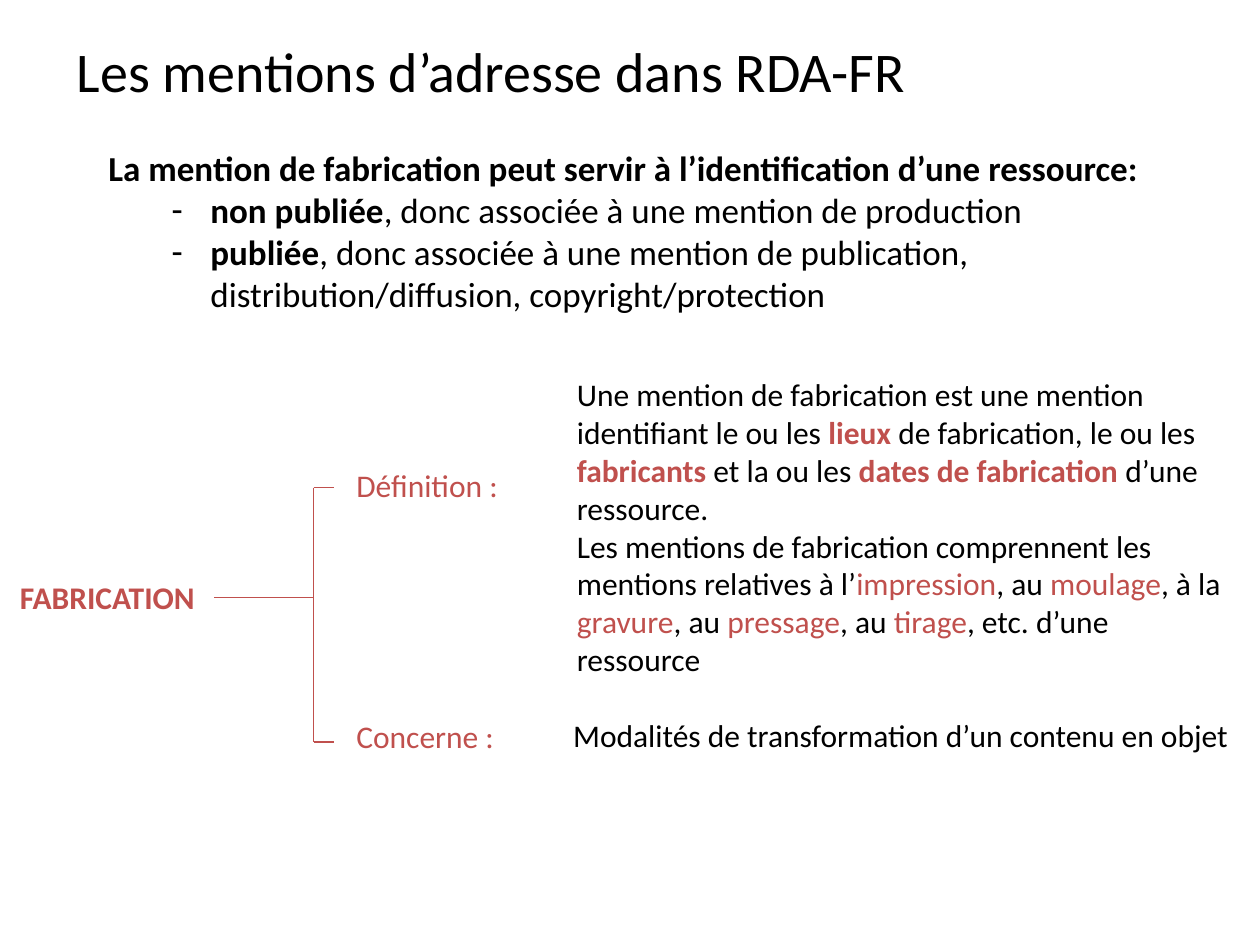
from pptx import Presentation
from pptx import util as u
from pptx.dml.color import RGBColor
from pptx.enum import shapes, text
from pptx.oxml.ns import qn
from lxml import etree

BLACK = RGBColor(0x00, 0x00, 0x00)
RED = RGBColor(0xC0, 0x50, 0x4D)

PLAIN = {"bold": False, "color": BLACK}
BOLD = {"bold": True, "color": BLACK}
ACCENT = {"bold": False, "color": RED}
ACCENT_BOLD = {"bold": True, "color": RED}

TITLE = [[("Les mentions d’adresse dans RDA-FR", PLAIN)]]
USES = [
    [("La mention de fabrication peut servir à l’identification d’une ressource:", BOLD)],
    [("non publiée", BOLD), (", donc associée à une mention de production", PLAIN)],
    [("publiée", BOLD),
     (", donc associée à une mention de publication, "
      "distribution/diffusion, copyright/protection", PLAIN)],
]
DEFINITION = [
    [("Une mention de fabrication est une mention identifiant le ou les ", PLAIN),
     ("lieux", ACCENT_BOLD), (" de fabrication, le ou les ", PLAIN),
     ("fabricants", ACCENT_BOLD), (" et la ou les ", PLAIN),
     ("dates de fabrication ", ACCENT_BOLD), ("d’une ressource.", PLAIN)],
    [("Les mentions de fabrication comprennent les mentions relatives à l’", PLAIN),
     ("impression", ACCENT), (", au ", PLAIN), ("moulage", ACCENT), (", à la ", PLAIN),
     ("gravure", ACCENT), (", au ", PLAIN), ("pressage", ACCENT), (", au ", PLAIN),
     ("tirage", ACCENT), (", etc. d’une ressource", PLAIN)],
]


def place(shape, left, top, width, height):
    box = {"left": left, "top": top, "width": width, "height": height}
    for name, value in box.items():
        setattr(shape, name, u.Inches(value))


def write(shape, paragraphs, size):
    """Fill a shape with paragraphs made of (text, style) runs."""
    frame = shape.text_frame
    settings = {"word_wrap": True, "auto_size": text.MSO_AUTO_SIZE.NONE,
                "vertical_anchor": text.MSO_ANCHOR.TOP}
    for name, value in settings.items():
        setattr(frame, name, value)
    for index, runs in enumerate(paragraphs):
        paragraph = frame.add_paragraph() if index else frame.paragraphs[0]
        paragraph.alignment = text.PP_ALIGN.LEFT
        paragraph.space_before = u.Pt(0)
        for words, style in runs:
            run = paragraph.add_run()
            run.text = words
            font = {"name": "Calibri", "size": u.Pt(size), "bold": style["bold"]}
            for name, value in font.items():
                setattr(run.font, name, value)
            run.font.color.rgb = style["color"]


def set_bullet(paragraph, character=None, margin=0, indent=0):
    properties = paragraph._p.get_or_add_pPr()
    properties.set("marL", str(u.Inches(margin)))
    properties.set("indent", str(u.Inches(indent)))
    if character:
        etree.SubElement(properties, qn("a:buChar")).set("char", character)
    else:
        etree.SubElement(properties, qn("a:buNone"))


def add_text(slide, box, paragraphs, size=18):
    shape = slide.shapes.add_textbox(*map(u.Inches, box))
    write(shape, paragraphs, size)


def add_line(slide, *ends):
    line = slide.shapes.add_connector(shapes.MSO_CONNECTOR.STRAIGHT, *map(u.Inches, ends))
    line.line.color.rgb = RED
    line.line.width = u.Pt(0.75)
    etree.SubElement(line._element.spPr, qn("a:effectLst"))


def add_bracket(slide, left, spine, middle, top, bottom, arm=0.16):
    add_line(slide, left, middle, spine, middle)
    add_line(slide, spine, top, spine, bottom)
    for height in (top, bottom):
        add_line(slide, spine, height, spine + arm, height)


def main():
    presentation = Presentation()
    presentation.slide_width = u.Inches(10)
    presentation.slide_height = u.Inches(7.5)
    slide = presentation.slides.add_slide(presentation.slide_layouts[1])

    # Title
    title = slide.shapes.title
    place(title, 0.51, 0.24, 9, 0.7)
    write(title, TITLE, 32)

    # Uses of the statement, with dashes below the lead sentence
    uses = slide.placeholders[1]
    place(uses, 0.76, 1.11, 8.5, 1.45)
    write(uses, USES, 20)
    lead, *items = uses.text_frame.paragraphs
    set_bullet(lead)
    for item in items:
        item.level = 1
        set_bullet(item, "-", 0.81, -0.31)

    # Explanations on the right
    add_text(slide, (4.48, 2.93, 5.39, 2.52), DEFINITION)
    add_text(slide, (4.45, 5.63, 5.75, 0.71),
             [[("Modalités de transformation d’un contenu en objet", PLAIN)]])

    # Topic and its two branches
    add_text(slide, (0.06, 4.54, 1.81, 0.4), [[("FABRICATION", ACCENT_BOLD)]])
    for label, top in (("Définition :", 3.65), ("Concerne :", 5.64)):
        add_text(slide, (2.73, top, 1.46, 0.4), [[(label, ACCENT)]])
    add_bracket(slide, left=1.7, spine=2.49, middle=4.74, top=3.87, bottom=5.89)

    presentation.save("out.pptx")


if __name__ == "__main__":
    main()
